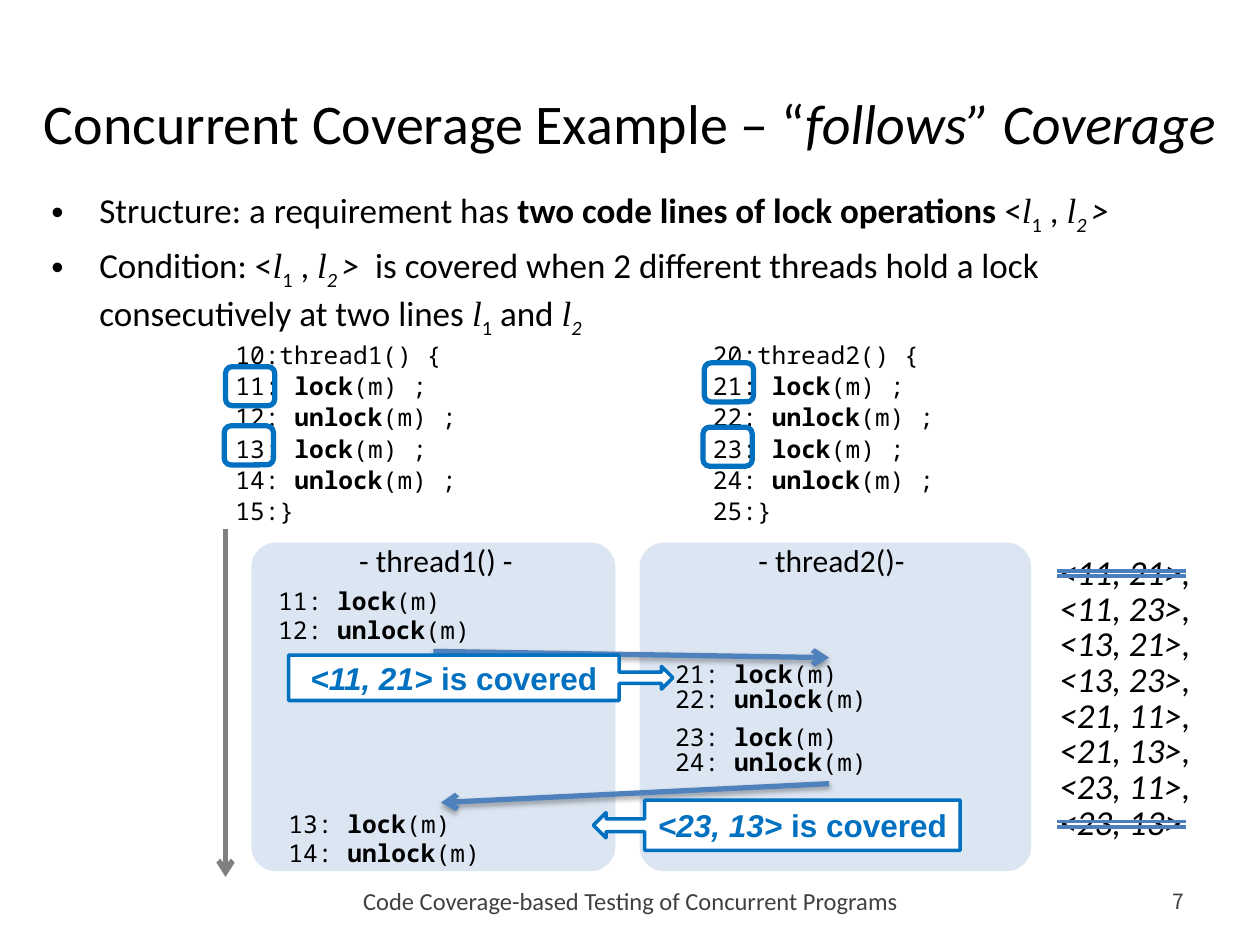
from dataclasses import dataclass
from lxml.etree import SubElement as Sub
from pptx import Presentation as Deck
from pptx.dml.color import RGBColor as RGB
from pptx.enum.shapes import MSO_CONNECTOR as Link, MSO_SHAPE as Kind
from pptx.enum.text import MSO_ANCHOR as Anchor, MSO_AUTO_SIZE as Fit, PP_ALIGN as Align
from pptx.oxml.ns import qn
from pptx.util import Pt

PX = 9144


@dataclass(frozen=True)
class Theme:
    black: str = "000000"
    white: str = "FFFFFF"
    pale: str = "DCE6F2"
    blue: str = "0070C0"
    arrow: str = "4F81BD"
    strike: str = "4B7EBC"
    gray: str = "808080"
    dim: str = "404040"
    sans: str = "Calibri"
    mono: str = "Noto Sans Mono"
    bold: str = "Arial"
    serif: str = "Times New Roman"
    cjk: str = "Noto Sans CJK KR"
    title: int = 32
    body: int = 20
    label: int = 18
    code: int = 14
    foot: int = 14
    page: int = 12


def mark(line, style, base=""):
    parts = line.split("*")
    return [(part, base + style * (n % 2)) for n, part in enumerate(parts) if part]


class Slide:
    def __init__(self, deck, theme):
        self.theme = theme
        self.page = deck.slides.add_slide(deck.slide_layouts[5])
        self.shapes = self.page.shapes

    def area(self, box):
        return [n * PX for n in box]

    def typeset(self, frame, lines, size, font=None, color=None, align=Align.LEFT,
                anchor=Anchor.TOP, before=0, pitch=None, wrap=True):
        frame.word_wrap = wrap
        frame.auto_size = Fit.NONE
        frame.vertical_anchor = anchor
        for n, line in enumerate(lines):
            para = frame.paragraphs[0] if n == 0 else frame.add_paragraph()
            para.alignment = align
            para.space_before = Pt(before)
            if pitch:
                para.line_spacing = pitch
            for text, style in line:
                run = para.add_run()
                run.text = text
                face = run.font
                face.size = Pt(size)
                face.name = self.theme.serif if "t" in style else font or self.theme.sans
                face.color.rgb = RGB.from_string(color or self.theme.black)
                face.bold = "b" in style
                face.italic = "i" in style
                if "s" in style:
                    face._element.set("baseline", "-25000")

    def title(self, box, line):
        shape = self.shapes.title
        shape.left, shape.top, shape.width, shape.height = self.area(box)
        self.typeset(shape.text_frame, [mark(line, "i")], self.theme.title,
                     align=Align.CENTER, anchor=Anchor.MIDDLE)

    def text(self, box, lines, size, **look):
        shape = self.shapes.add_textbox(*self.area(box))
        self.typeset(shape.text_frame, lines, size, **look)
        return shape

    def points(self, box, lines):
        shape = self.text(box, lines, self.theme.body, before=4)
        for para in shape.text_frame.paragraphs:
            props = para._p.get_or_add_pPr()
            props.set("marL", str(38 * PX))
            props.set("indent", str(-38 * PX))
            Sub(props, qn("a:buFont"), typeface="Arial")
            Sub(props, qn("a:buChar"), char="•")

    def code(self, box, lines, **look):
        self.text(box, [mark(line, "b") for line in lines], self.theme.code,
                  font=self.theme.mono, **look)

    def shape(self, kind, box, fill=None, line=None, width=2, adjust=()):
        shape = self.shapes.add_shape(kind, *self.area(box))
        shape.shadow.inherit = False
        if fill:
            shape.fill.solid()
            shape.fill.fore_color.rgb = RGB.from_string(fill)
        else:
            shape.fill.background()
        if line:
            shape.line.color.rgb = RGB.from_string(line)
            shape.line.width = Pt(width)
        else:
            shape.line.fill.background()
        for n, value in enumerate(adjust):
            shape.adjustments[n] = value
        return shape

    def label(self, box, text):
        shape = self.shape(Kind.ROUNDED_RECTANGLE, box, adjust=[0.07])
        self.typeset(shape.text_frame, [mark(text, "")], self.theme.label,
                     align=Align.CENTER)

    def callout(self, kind, box, text):
        shape = self.shape(kind, box, self.theme.white, self.theme.blue,
                           adjust=[0.25, 0.25, 0.25, 0.86])
        self.typeset(shape.text_frame, [mark(text, "i", "b")], self.theme.label,
                     font=self.theme.bold, color=self.theme.blue, align=Align.CENTER,
                     anchor=Anchor.MIDDLE, wrap=False)

    def line(self, ends, color, width, head=False, shade=False):
        link = self.shapes.add_connector(Link.STRAIGHT, *self.area(ends))
        link.line.color.rgb = RGB.from_string(color)
        link.line.width = Pt(width)
        if head:
            Sub(link.line._get_or_add_ln(), qn("a:tailEnd"), type="arrow")
        effects = Sub(link._element.spPr, qn("a:effectLst"))
        if shade:
            cast = Sub(effects, qn("a:outerShdw"), blurRad=str(Pt(3.1)),
                       dist=str(Pt(1.8)), dir="5400000", rotWithShape="0")
            ink = Sub(cast, qn("a:srgbClr"), val=self.theme.black)
            Sub(ink, qn("a:alpha"), val="35000")


def main():
    deck = Deck()
    deck.slide_width, deck.slide_height = 1000 * PX, 750 * PX
    theme = Theme()
    slide = Slide(deck, theme)

    slide.title((5, 54, 990, 85), "Concurrent Coverage Example – “*follows” Coverage")
    first = [("l", "it"), ("1", "s")]
    second = [("l", "it"), ("2", "is")]
    pair = [("<", ""), *first, (" , ", ""), *second, (" ", "is")]
    slide.points((31, 145, 937, 137), [
        [("Structure: a requirement has ", ""),
         ("two code lines of lock operations ", "b"), *pair, (">", "i")],
        [("Condition: ", ""), *pair, (">  ", "i"),
         ("is covered when 2 different threads hold a lock consecutively at two lines ", ""),
         *first, (" and ", ""), *second],
    ])

    calls = ["lock", "unlock"] * 2
    for num, left in ((1, 177), (2, 556)):
        base = num * 10
        steps = [f"{base + n}: *{call}*(m) ;" for n, call in enumerate(calls, 1)]
        slide.code((left, 265, 267, 158),
                   [f"{base}:thread{num}() {{", *steps, f"{base + 5}:}}"], before=1)

    for left, width in ((509, 308), (201, 286)):
        slide.shape(Kind.ROUNDED_RECTANGLE, (left, 432, width, 258),
                    theme.pale, theme.pale, adjust=[0.07])
    slide.line((179, 420, 179, 696), theme.gray, 3, head=True)
    slide.label((229, 424, 234, 35), "- thread1() -")
    slide.label((526, 424, 268, 35), "- thread2()-")

    for ends in ((344, 517, 658, 522), (658, 622, 350, 637)):
        slide.line(ends, theme.arrow, 3, head=True, shade=True)
    for num, box, pitch in (
        (11, (211, 460, 266, 57), None),
        (21, (526, 522, 265, 50), 0.85),
        (23, (526, 572, 265, 50), 0.85),
        (13, (219, 637, 262, 57), None),
    ):
        slide.code(box, [f"{num}: *lock*(m)", f"{num + 1}: *unlock*(m)"], pitch=pitch)
    slide.callout(Kind.RIGHT_ARROW_CALLOUT, (229, 520, 305, 36), "*<11, 21> *is covered")
    slide.callout(Kind.LEFT_ARROW_CALLOUT, (471, 635, 291, 40), "*<23, 13> *is covered")

    slide.text((161, 695, 679, 40),
               [mark("Code Coverage-based Testing of Concurrent Programs", "")],
               theme.foot, color=theme.dim, align=Align.CENTER, anchor=Anchor.MIDDLE)
    slide.text((894, 695, 56, 40), [mark("7", "")], theme.page, font=theme.cjk,
               color=theme.dim, align=Align.RIGHT, anchor=Anchor.MIDDLE)

    for left, top in ((179, 291), (178, 338), (558, 339), (559, 288)):
        slide.shape(Kind.ROUNDED_RECTANGLE, (left, top, 39, 31), line=theme.blue, width=3)

    ones, twos = (11, 13), (21, 23)
    pairs = [f"<{a}, {b}>" for left, right in ((ones, twos), (twos, ones))
             for a in left for b in right]
    goals = [f"{goal}," for goal in pairs[:-1]] + pairs[-1:]
    panel = slide.shape(Kind.RECTANGLE, (831, 437, 142, 239), theme.white)
    slide.typeset(panel.text_frame, [mark(goal, "", "i") for goal in goals],
                  theme.body, pitch=0.85)
    for top in (453, 652):
        for y in (top, top + 4):
            slide.line((839, y, 941, y), theme.strike, 2.25)

    deck.save("out.pptx")


if __name__ == "__main__":
    main()
